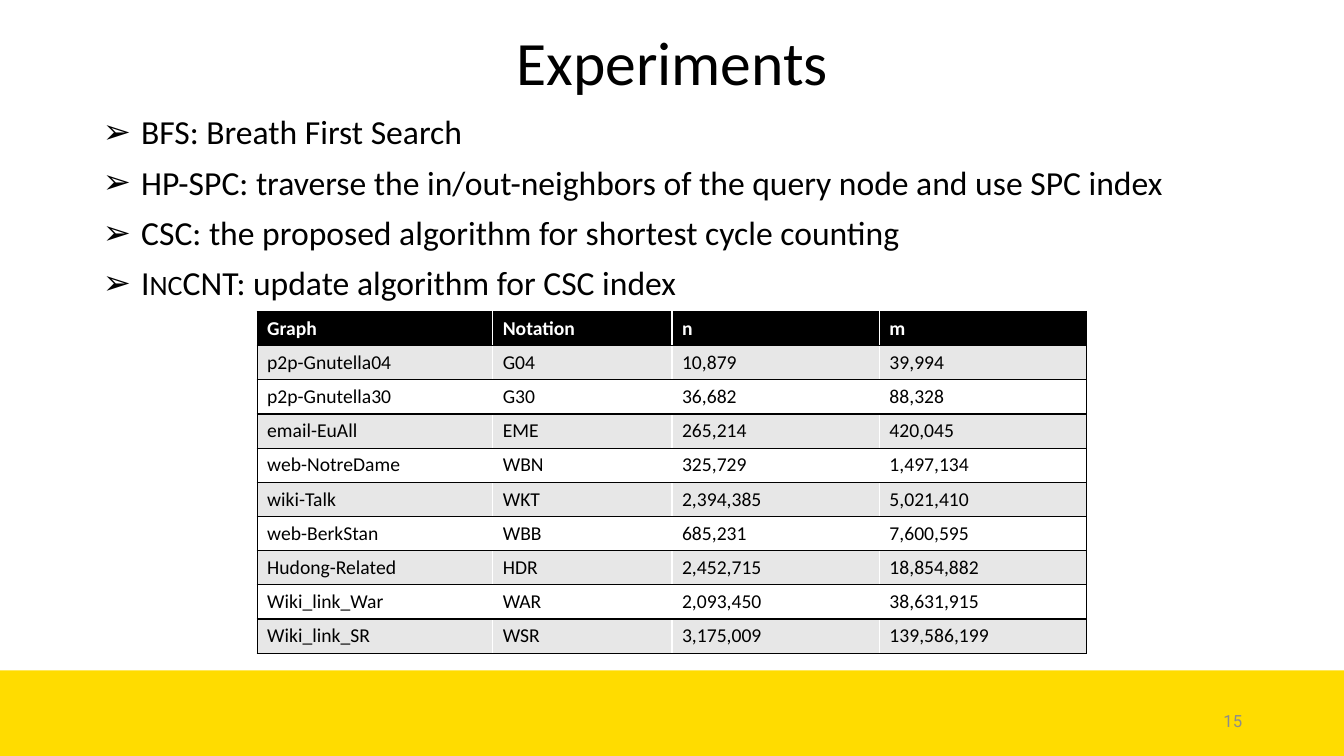
from lxml import etree
from pptx import Presentation
from pptx import util as u
from pptx.dml.color import RGBColor
from pptx.enum import shapes, text
from pptx.oxml.ns import qn

WIDTH, HEIGHT = 13.33, 7.5
MARGIN, CONTENT_WIDTH = 0.92, 11.5
COLORS = {"black": "000000", "white": "FFFFFF", "stripe": "E7E7E7",
          "yellow": "FFDC00", "gray": "8C8C8C"}

METHODS = [
    [("BFS: Breath First Search", 24)],
    [("HP-SPC: traverse the in/out-neighbors of the query node and use SPC index", 24)],
    [("CSC: the proposed algorithm for shortest cycle counting", 24)],
    [("I", 24), ("NC", 20), ("CNT: update algorithm for CSC index", 24)],
]
GRAPHS = [
    ("Graph", "Notation", "n", "m"),
    ("p2p-Gnutella04", "G04", "10,879", "39,994"),
    ("p2p-Gnutella30", "G30", "36,682", "88,328"),
    ("email-EuAll", "EME", "265,214", "420,045"),
    ("web-NotreDame", "WBN", "325,729", "1,497,134"),
    ("wiki-Talk", "WKT", "2,394,385", "5,021,410"),
    ("web-BerkStan", "WBB", "685,231", "7,600,595"),
    ("Hudong-Related", "HDR", "2,452,715", "18,854,882"),
    ("Wiki_link_War", "WAR", "2,093,450", "38,631,915"),
    ("Wiki_link_SR", "WSR", "3,175,009", "139,586,199"),
]
COLUMN_WIDTHS = (2.34, 1.78, 2.06, 2.06)


def rgb(name):
    return RGBColor.from_string(COLORS[name])


def inches(box):
    return [u.Inches(length) for length in box]


def place(shape, box):
    shape.left, shape.top, shape.width, shape.height = inches(box)


def add_span(para, words, size=14, color="black", bold=False, font="Calibri"):
    span = para.add_run()
    span.text = words
    span.font.name, span.font.size, span.font.bold = font, u.Pt(size), bold
    span.font.color.rgb = rgb(color)


def add_bullet(para, indent=0.38):
    props = para._p.get_or_add_pPr()
    props.set("marL", str(u.Inches(indent)))
    props.set("indent", str(-u.Inches(indent)))
    etree.SubElement(props, qn("a:buFont"), typeface="Arial")
    etree.SubElement(props, qn("a:buChar"), char="➢")


def add_borders(cell, sides):
    props = cell._tc.get_or_add_tcPr()
    for side in sides:
        line = etree.SubElement(props, qn(f"a:ln{side}"), w=str(u.Pt(1)))
        fill = etree.SubElement(line, qn("a:solidFill"))
        etree.SubElement(fill, qn("a:srgbClr"), val=COLORS["black"])


def fill_title(page, box):
    title = page.shapes.title
    place(title, box)
    frame = title.text_frame
    frame.auto_size = text.MSO_AUTO_SIZE.NONE
    frame.vertical_anchor = text.MSO_ANCHOR.MIDDLE
    para = frame.paragraphs[0]
    para.alignment, para.line_spacing = text.PP_ALIGN.CENTER, 0.9
    add_span(para, "Experiments", size=44)


def fill_methods(page, box):
    body = page.placeholders[1]
    place(body, box)
    frame = body.text_frame
    frame.auto_size = text.MSO_AUTO_SIZE.NONE
    for index, spans in enumerate(METHODS):
        para = frame.add_paragraph() if index else frame.paragraphs[0]
        add_bullet(para)
        para.line_spacing = 0.9
        para.space_before = u.Pt(10 if index else 0)
        for words, size in spans:
            add_span(para, words, size=size)


def add_graph_table(page, box):
    rows, columns = len(GRAPHS), len(COLUMN_WIDTHS)
    table = page.shapes.add_table(rows, columns, *inches(box)).table
    for column, width in zip(table.columns, COLUMN_WIDTHS):
        column.width = u.Inches(box[2] * width / sum(COLUMN_WIDTHS))
    for r, values in enumerate(GRAPHS):
        table.rows[r].height = u.Inches(box[3] / rows)
        header = r == 0
        fill = "black" if header else "stripe" if r % 2 else "white"
        for c, value in enumerate(values):
            cell = table.cell(r, c)
            # Outer edges on the sides, rules above and below every row
            sides = ["L"] * (c == 0) + ["R"] * (c == columns - 1) + ["T", "B"]
            add_borders(cell, sides)
            cell.fill.solid()
            cell.fill.fore_color.rgb = rgb(fill)
            add_span(cell.text_frame.paragraphs[0], value, bold=header,
                     color="white" if header else "black")


def add_footer(page, box):
    left, top, width, height = box
    # Yellow band
    band = page.shapes.add_shape(shapes.MSO_SHAPE.RECTANGLE, *inches(box))
    band.shadow.inherit = False
    band.fill.solid()
    band.fill.fore_color.rgb = rgb("yellow")
    band.line.fill.background()
    # Page number, right-aligned with the content
    number_box = (MARGIN + CONTENT_WIDTH - 3, top + 0.3, 3, 0.4)
    frame = page.shapes.add_textbox(*inches(number_box)).text_frame
    frame.word_wrap = True
    frame.vertical_anchor = text.MSO_ANCHOR.MIDDLE
    para = frame.paragraphs[0]
    para.alignment = text.PP_ALIGN.RIGHT
    add_span(para, "15", size=12, color="gray", font="Roboto")


def main():
    deck = Presentation()
    deck.slide_width, deck.slide_height = u.Inches(WIDTH), u.Inches(HEIGHT)
    page = deck.slides.add_slide(deck.slide_layouts[1])
    add_footer(page, (0, HEIGHT - 0.85, WIDTH, 0.85))
    fill_title(page, (MARGIN, 0.23, CONTENT_WIDTH, 0.85))
    fill_methods(page, (MARGIN, 1.1, CONTENT_WIDTH, 5.31))
    add_graph_table(page, ((WIDTH - 8.23) / 2, 3.09, 8.23, 3.39))
    deck.save("out.pptx")


if __name__ == "__main__":
    main()
